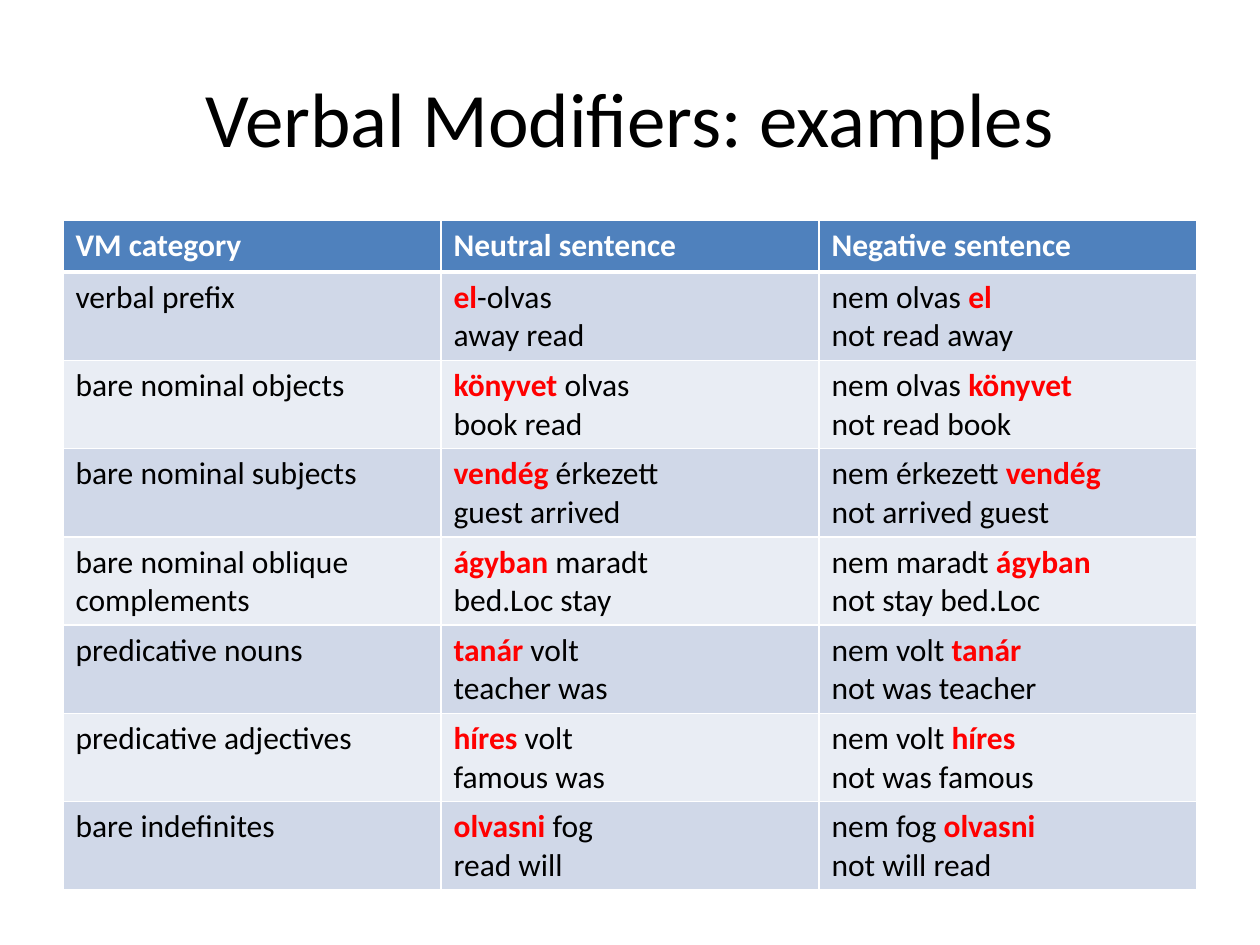
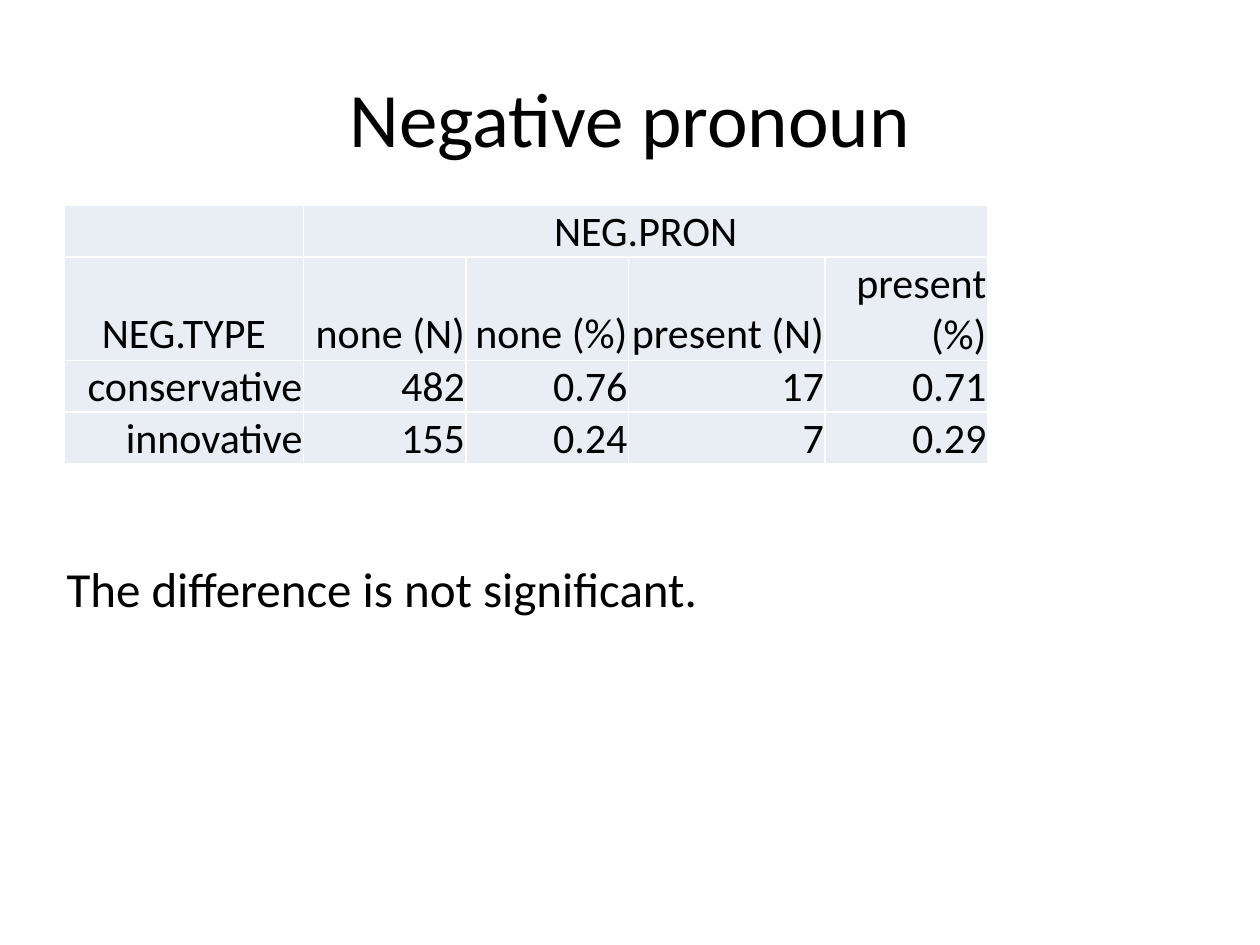
from dataclasses import dataclass

from lxml import etree
from pptx import Presentation
from pptx.dml.color import RGBColor
from pptx.enum.text import MSO_ANCHOR, PP_ALIGN
from pptx.oxml.ns import qn
from pptx.util import Inches, Pt

LEFT, CENTER, RIGHT = PP_ALIGN.LEFT, PP_ALIGN.CENTER, PP_ALIGN.RIGHT
TOP, MIDDLE, BOTTOM = MSO_ANCHOR.TOP, MSO_ANCHOR.MIDDLE, MSO_ANCHOR.BOTTOM

MODIFIER_TITLE = "Verbal Modifiers: examples"
MODIFIER_HEADINGS = ["VM category", "Neutral sentence", "Negative sentence"]
MODIFIERS = [
    ("verbal prefix", "el", "-", "olvas", "away", "read"),
    ("bare nominal objects", "könyvet", " ", "olvas", "book", "read"),
    ("bare nominal subjects", "vendég", " ", "érkezett", "guest", "arrived"),
    ("bare nominal oblique complements", "ágyban", " ", "maradt", "bed.Loc", "stay"),
    ("predicative nouns", "tanár", " ", "volt", "teacher", "was"),
    ("predicative adjectives", "híres", " ", "volt", "famous", "was"),
    ("bare indefinites", "olvasni", " ", "fog", "read", "will"),
]

PRONOUN_TITLE = "Negative pronoun"
PRONOUN_COUNTS = [
    ["", "NEG.PRON", "", "", ""],
    ["NEG.TYPE", "none (N)", "none (%)", "present (N)", "present (%)"],
    ["conservative", "482", "0.76", "17", "0.71"],
    ["innovative", "155", "0.24", "7", "0.29"],
]
PRONOUN_REMARK = "The difference is not significant."


@dataclass(frozen=True)
class Theme:
    font: str = "Calibri"
    text: str = "000000"
    accent: str = "FF0000"
    white: str = "FFFFFF"
    header: str = "4F81BD"
    dark_band: str = "D0D8E8"
    light_band: str = "E9EDF4"
    title_size: int = 44
    remark_size: int = 28
    count_size: int = 24
    example_size: int = 18
    thin: int = 1
    thick: int = 3


THEME = Theme()


def set_all(target, values):
    for name, value in values.items():
        setattr(target, name, value)


def write_spans(para, spans, size, color=THEME.text, bold=False, align=LEFT):
    para.alignment = align
    for text, accented in spans:
        if text == "\n":
            para.add_line_break()
            continue
        span = para.add_run()
        span.text = text
        set_all(span.font, {"name": THEME.font, "size": Pt(size), "bold": bold or accented})
        span.font.color.rgb = RGBColor.from_string(THEME.accent if accented else color)


def add_text(page, area, text, size, align=LEFT, anchor=TOP):
    box = page.shapes.add_textbox(*map(Inches, area))
    set_all(box.text_frame, {"word_wrap": True, "vertical_anchor": anchor})
    write_spans(box.text_frame.paragraphs[0], [(text, False)], size, align=align)


def add_page(deck, title):
    page = deck.slides.add_slide(deck.slide_layouts[6])
    add_text(page, (0.5, 0.3, 9, 1.25), title, THEME.title_size, CENTER, MIDDLE)
    return page


def add_grid(page, left, top, widths, heights):
    area = map(Inches, (left, top, sum(widths), sum(heights)))
    table = page.shapes.add_table(len(heights), len(widths), *area).table
    set_all(table, {"first_row": False, "horz_banding": False})
    for column, width in zip(table.columns, widths):
        column.width = Inches(width)
    for row, height in zip(table.rows, heights):
        row.height = Inches(height)
    return table


def paint_cell(cell, fill, top=THEME.thin, bottom=THEME.thin):
    properties = cell._tc.get_or_add_tcPr()
    for side, width in zip("LRTB", (THEME.thin, THEME.thin, top, bottom)):
        line = etree.SubElement(properties, qn(f"a:ln{side}"), w=str(Pt(width)))
        solid = etree.SubElement(line, qn("a:solidFill"))
        etree.SubElement(solid, qn("a:srgbClr"), val=THEME.white)
    cell.fill.solid()
    cell.fill.fore_color.rgb = RGBColor.from_string(fill)


def example_spans(category, modifier, joint, verb, modifier_gloss, verb_gloss):
    return [
        [(category, False)],
        [(modifier, True), (joint + verb, False), ("\n", False),
         (f"{modifier_gloss} {verb_gloss}", False)],
        [(f"nem {verb} ", False), (modifier, True), ("\n", False),
         (f"not {verb_gloss} {modifier_gloss}", False)],
    ]


def build_modifiers(deck):
    page = add_page(deck, MODIFIER_TITLE)
    rows = [[[(heading, False)] for heading in MODIFIER_HEADINGS]]
    rows += [example_spans(*modifier) for modifier in MODIFIERS]
    table = add_grid(page, 0.5, 1.75, [3] * 3, [0.41] + [0.7] * len(MODIFIERS))
    for r, row in enumerate(rows):
        fill = THEME.dark_band if r % 2 else THEME.light_band
        style = {"color": THEME.text}
        if r == 0:
            fill = THEME.header
            style = {"color": THEME.white, "bold": True}
        for c, spans in enumerate(row):
            cell = table.cell(r, c)
            paint_cell(cell, fill, top=THEME.thick if r == 1 else THEME.thin,
                       bottom=THEME.thick if r == 0 else THEME.thin)
            write_spans(cell.text_frame.paragraphs[0], spans, THEME.example_size, **style)


def build_pronouns(deck):
    page = add_page(deck, PRONOUN_TITLE)
    table = add_grid(page, 0.51, 1.63, [1.9, 1.29, 1.29, 1.56, 1.29],
                     [0.41, 0.82, 0.41, 0.41])
    table.cell(0, 1).merge(table.cell(0, 4))
    insets = {"margin_left": Inches(0.01), "margin_right": Inches(0.01),
              "margin_top": Inches(0.01), "margin_bottom": 0, "vertical_anchor": BOTTOM}
    for r, row in enumerate(PRONOUN_COUNTS):
        for c, text in enumerate(row):
            cell = table.cell(r, c)
            set_all(cell, insets)
            paint_cell(cell, THEME.light_band)
            if text:
                align = CENTER if r == 0 or (r, c) == (1, 0) else RIGHT
                write_spans(cell.text_frame.paragraphs[0], [(text, False)],
                            THEME.count_size, align=align)
    add_text(page, (0.43, 4.38, 7.48, 0.57), PRONOUN_REMARK, THEME.remark_size)


def main():
    deck = Presentation()
    set_all(deck, {"slide_width": Inches(10), "slide_height": Inches(7.5)})
    build_modifiers(deck)
    build_pronouns(deck)
    deck.save("out.pptx")


if __name__ == "__main__":
    main()
